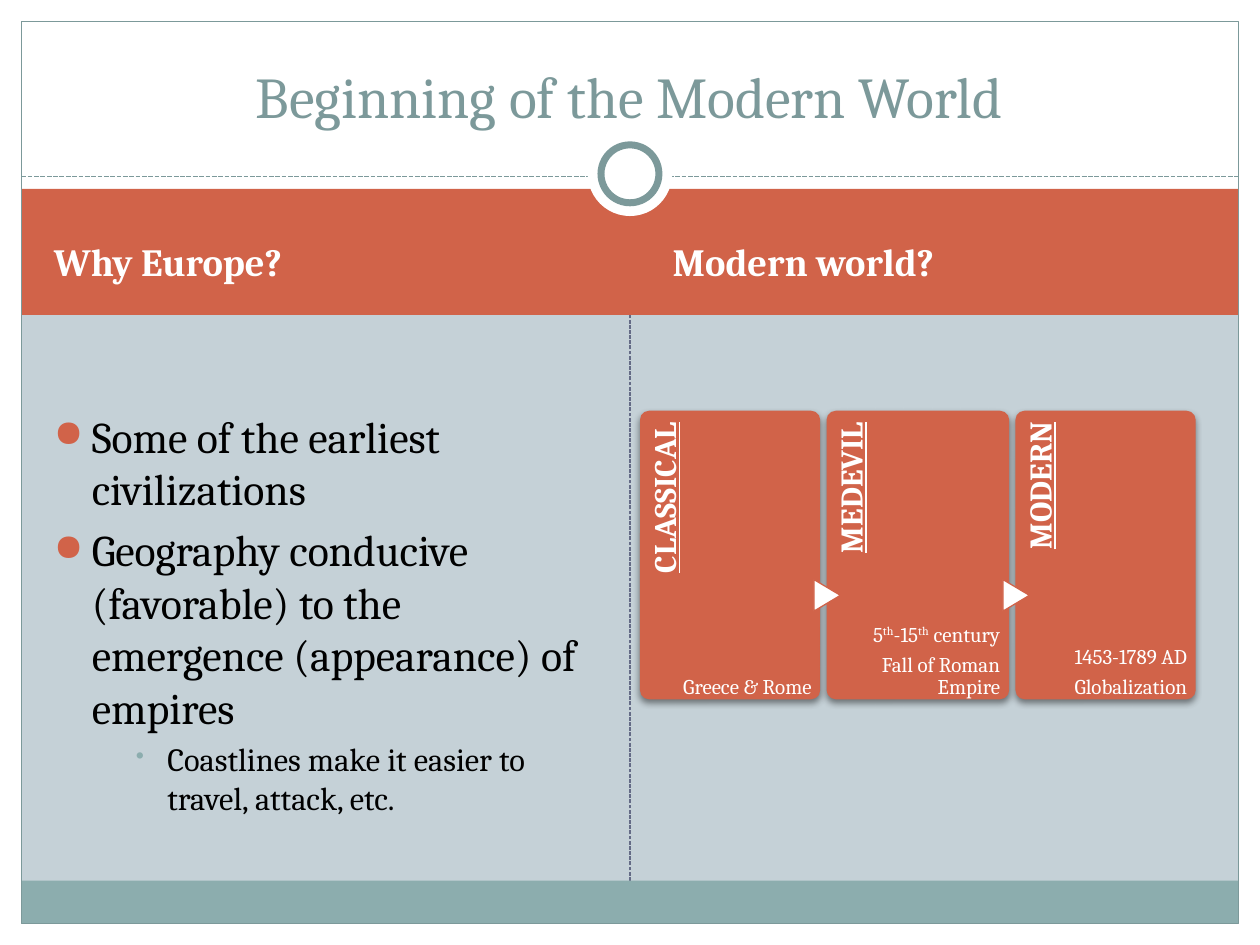
from lxml import etree
from pptx import Presentation
from pptx.dml.color import RGBColor
from pptx.enum.dml import MSO_LINE
from pptx.enum.shapes import MSO_CONNECTOR, MSO_SHAPE as SHAPE
from pptx.enum.text import MSO_ANCHOR as ANCHOR, PP_ALIGN as ALIGN
from pptx.oxml import parse_xml
from pptx.oxml.ns import nsdecls, qn
from pptx.util import Inches, Pt

WHITE = RGBColor(0xFF, 0xFF, 0xFF)
BLACK = RGBColor(0, 0, 0)
SKY = RGBColor(0xC5, 0xD1, 0xD7)
RUST = RGBColor(0xD1, 0x63, 0x49)
TEAL = RGBColor(0x8C, 0xAD, 0xAE)
SLATE = RGBColor(0x7C, 0x99, 0x9A)
INDIGO = RGBColor(0x64, 0x6B, 0x86)
FONT = "Cambria"
WIDTH, HEIGHT, MARGIN = 10, 7.5, 0.17
STANDARD_INSETS = (0.1, 0.05, 0.1, 0.05)

# (era, notes, card width); text between carets is superscript
ERAS = [
    ("CLASSICAL", ["Greece & Rome"], 1.43),
    ("MEDEVIL", ["5^th^-15^th^ century", "Fall of Roman Empire"], 1.45),
    ("MODERN", ["1453-1789 AD", "Globalization"], 1.43),
]
# (text, size, left indent, hanging, bullet, bullet colour, bullet size)
REASONS = [
    ("Some of the earliest civilizations", 25, 0.3, 0.3, "●", RUST, 85),
    ("Geography conducive (favorable) to the emergence (appearance) of empires",
     25, 0.3, 0.3, "●", RUST, 85),
    ("Coastlines make it easier to travel, attack, etc.",
     18.5, 0.9, 0.25, "•", TEAL, 75),
]


def add_block(slide, box, kind=SHAPE.RECTANGLE, fill=None, line=None, weight=0.75):
    block = slide.shapes.add_shape(kind, *map(Inches, box))
    block.shadow.inherit = False
    if fill is None:
        block.fill.background()
    else:
        block.fill.solid()
        block.fill.fore_color.rgb = fill
    if line is None:
        block.line.fill.background()
    else:
        block.line.color.rgb = line
        block.line.width = Pt(weight)
    return block


def add_dashed_line(slide, start, end, color, weight):
    rule = slide.shapes.add_connector(
        MSO_CONNECTOR.STRAIGHT, *map(Inches, (*start, *end)))
    rule.line.color.rgb = color
    rule.line.width = Pt(weight)
    rule.line.dash_style = MSO_LINE.SQUARE_DOT
    properties = rule._element.spPr
    properties.find(qn("a:ln")).find(qn("a:prstDash")).set("val", "sysDash")
    etree.SubElement(properties, qn("a:effectLst"))


def add_frame(slide, box, anchor=ANCHOR.TOP, insets=STANDARD_INSETS):
    holder = slide.shapes.add_textbox(*map(Inches, box))
    frame = holder.text_frame
    frame.word_wrap = True
    frame.vertical_anchor = anchor
    (frame.margin_left, frame.margin_top,
     frame.margin_right, frame.margin_bottom) = map(Inches, insets)
    return holder, frame


def style(paragraph, size, color, bold=False, underline=False, align=ALIGN.LEFT):
    paragraph.alignment = align
    font = paragraph.font
    font.name, font.size, font.bold = FONT, Pt(size), bold
    font.underline = underline
    font.color.rgb = color


def paragraphs(frame, count):
    return [frame.paragraphs[0]] + [frame.add_paragraph() for _ in range(count - 1)]


def add_line_of_text(slide, box, text, size, color, anchor, **look):
    _, frame = add_frame(slide, box, anchor)
    frame.text = text
    style(frame.paragraphs[0], size, color, **look)


def add_backdrop(slide, box):
    left, top, width, height = box
    right = left + width
    middle = left + width / 2
    footer_top, header_line = 6.99, 1.4
    slide.background.fill.solid()
    slide.background.fill.fore_color.rgb = SKY
    add_dashed_line(slide, (middle, footer_top), (middle, 2.41), INDIGO, 0.75)

    # White header and page margins
    for edge in [(0, 0, WIDTH, 1.58), (0, HEIGHT - MARGIN, WIDTH, MARGIN),
                 (0, 0, MARGIN, HEIGHT), (WIDTH - MARGIN, 0, MARGIN, HEIGHT)]:
        add_block(slide, edge, fill=WHITE)

    # Heading band, footer band, rule and outline
    add_block(slide, (left, 1.5, width, 1), fill=RUST)
    add_block(slide, (left, footer_top, width, top + height - footer_top), fill=TEAL)
    add_dashed_line(slide, (left, header_line), (right, header_line), SLATE, 0.9)
    add_block(slide, box, line=SLATE)

    # Ring on the rule
    for size, line in [(0.67, None), (0.46, SLATE)]:
        add_block(slide, (middle - size / 2, 1.38 - size / 2, size, size),
                  SHAPE.OVAL, WHITE, line, 4)


def add_reasons(slide, box):
    _, frame = add_frame(slide, box)
    for index, (paragraph, reason) in enumerate(
            zip(paragraphs(frame, len(REASONS)), REASONS)):
        text, size, indent, hanging, bullet, color, scale = reason
        paragraph.text = text
        if index:
            paragraph.space_before = Pt(size * 0.2)
        properties = paragraph._p.get_or_add_pPr()
        properties.set("marL", str(Inches(indent)))
        properties.set("indent", str(-Inches(hanging)))
        bullet_color = etree.SubElement(properties, qn("a:buClr"))
        etree.SubElement(bullet_color, qn("a:srgbClr"), val=str(color))
        etree.SubElement(properties, qn("a:buSzPct"), val=str(scale * 1000))
        etree.SubElement(properties, qn("a:buChar"), char=bullet)
        style(paragraph, size, BLACK)


def add_era_card(slide, box, era, notes):
    left, top, width, height = box
    card = add_block(slide, box, SHAPE.ROUNDED_RECTANGLE, RUST)
    card.adjustments[0] = 0.05
    card._element.spPr.find(qn("a:effectLst")).append(parse_xml(
        f'<a:outerShdw {nsdecls("a")} blurRad="{Pt(4)}" dist="{Pt(2)}" dir="5400000" '
        'rotWithShape="0"><a:srgbClr val="000000"><a:alpha val="45000"/></a:srgbClr>'
        '</a:outerShdw>'))

    # Era name, reading upwards along the left edge
    length, depth = 1.87, 0.29
    label, frame = add_frame(
        slide, (left + (depth - length) / 2, top + (length - depth) / 2, length, depth),
        insets=(0, 0.07, 0.09, 0))
    label.rotation = 270
    frame.text = era
    frame.paragraphs[0].line_spacing = 0.9
    style(frame.paragraphs[0], 18, WHITE, bold=True, underline=True, align=ALIGN.RIGHT)

    # Notes at the foot
    _, frame = add_frame(slide, (left + depth, top, width * 0.75, height),
                         ANCHOR.BOTTOM, (0, 0.04, 0, 0))
    for paragraph, note in zip(paragraphs(frame, len(notes)), notes):
        for index, part in enumerate(note.split("^")):
            run = paragraph.add_run()
            run.text = part
            if index % 2:
                run.font._element.set("baseline", "30000")
        paragraph.line_spacing = 0.9
        paragraph.space_after = Pt(4.2)
        style(paragraph, 12, WHITE, align=ALIGN.RIGHT)


def add_timeline(slide, box):
    left, top, _, height = box
    gap = 0.05
    for index, (era, notes, width) in enumerate(ERAS):
        add_era_card(slide, (left, top, width, height), era, notes)
        if index:
            pointer = add_block(slide, (left - 0.12, top + 1.36, 0.25, 0.21),
                                SHAPE.FLOWCHART_EXTRACT, WHITE, RUST)
            pointer.rotation = 90
        left += width + gap


def main():
    deck = Presentation()
    deck.slide_width, deck.slide_height = Inches(WIDTH), Inches(HEIGHT)
    slide = deck.slides.add_slide(deck.slide_layouts[6])
    add_backdrop(slide, (MARGIN, MARGIN, WIDTH - 2 * MARGIN, HEIGHT - 2 * MARGIN))
    for left, heading in [(0.33, "Why Europe?"), (5.24, "Modern world?")]:
        add_line_of_text(slide, (left, 1.67, 4.42, 0.8), heading, 22, WHITE,
                         ANCHOR.MIDDLE, bold=True)
    add_reasons(slide, (0.33, 3.2, 4.42, 3.68))
    add_timeline(slide, (5.08, 3.26, 4.42, 2.29))
    add_line_of_text(slide, (0.33, 0.25, 9.33, 0.83), "Beginning of the Modern World",
                     33, SLATE, ANCHOR.BOTTOM, align=ALIGN.CENTER)
    deck.save("out.pptx")


if __name__ == "__main__":
    main()
